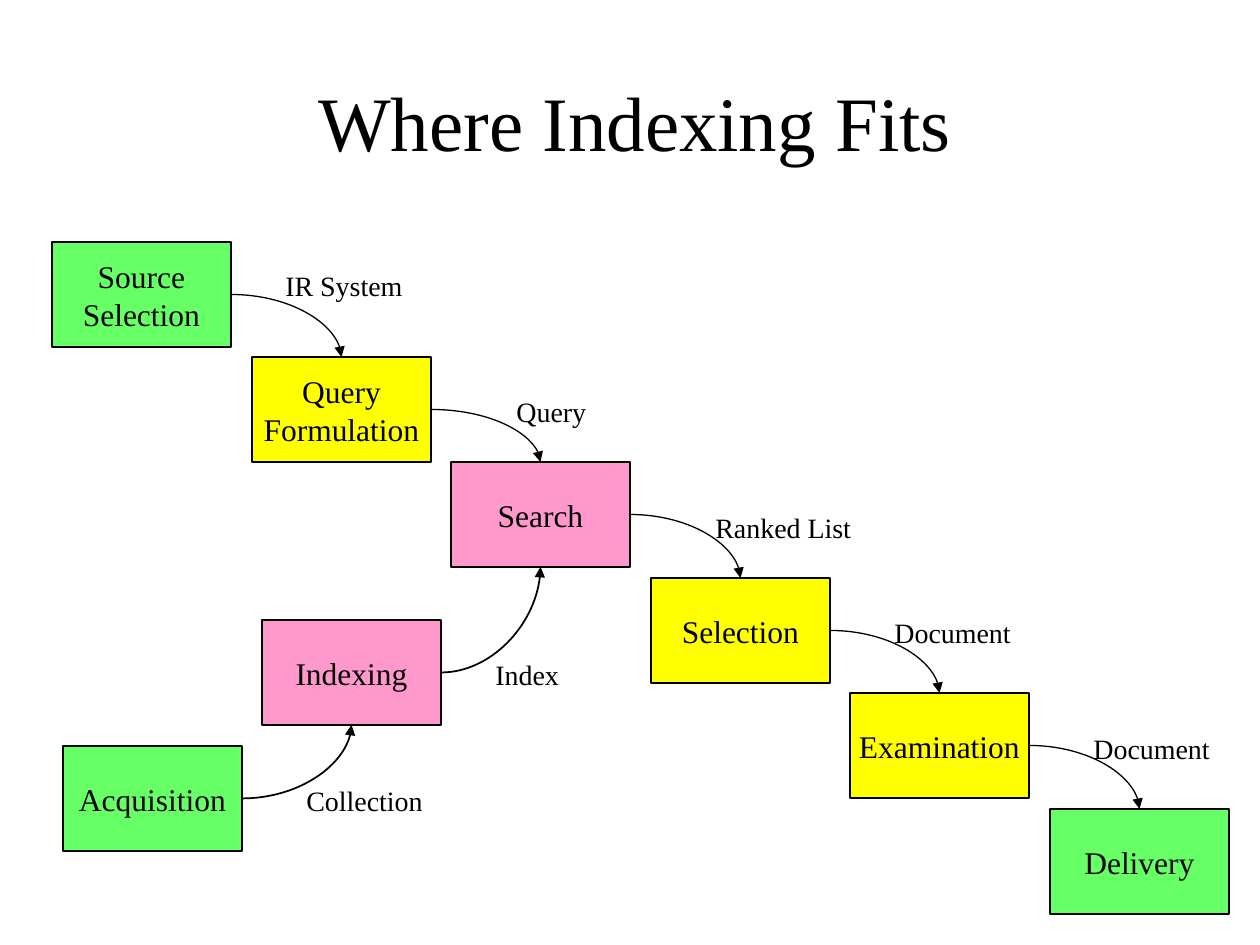
from lxml import etree
from pptx import Presentation
from pptx import util as u
from pptx.dml.color import RGBColor
from pptx.enum import shapes, text
from pptx.oxml.ns import qn

PX = 914400 / 126
FONT = "Times New Roman"
COLOURS = {"ink": "000000", "source": "66FF66", "user": "FFFF00", "system": "FF99CC"}
BOX_WIDTH, BOX_HEIGHT = 179, 105
TOP, RIGHT, BOTTOM = 0, 3, 2

# name: (left, top, colour)
STAGES = {
    "Source\nSelection": (52, 242, "source"),
    "Query\nFormulation": (252, 357, "user"),
    "Search": (451, 462, "system"),
    "Selection": (651, 578, "user"),
    "Examination": (850, 693, "user"),
    "Delivery": (1050, 809, "source"),
    "Indexing": (262, 620, "system"),
    "Acquisition": (63, 746, "source"),
}
# start, end, label, label left, label top, label width
FLOWS = [
    ("Source\nSelection", "Query\nFormulation", "IR System", 273, 262, 144),
    ("Query\nFormulation", "Search", "Query", 504, 388, 96),
    ("Search", "Selection", "Ranked List", 703, 504, 161),
    ("Selection", "Examination", "Document", 882, 609, 142),
    ("Examination", "Delivery", "Document", 1081, 725, 142),
    ("Indexing", "Search", "Index", 483, 651, 89),
    ("Acquisition", "Indexing", "Collection", 294, 777, 142),
]


def px(*lengths):
    return [u.Emu(round(length * PX)) for length in lengths]


def colour(name):
    return RGBColor.from_string(COLOURS[name])


def write(frame, words, size, align):
    frame.text = words
    for para in frame.paragraphs:
        para.alignment = align
        para.font.name = FONT
        para.font.size = u.Pt(size)
        para.font.color.rgb = colour("ink")


def add_title(page, words):
    title = page.shapes.title
    title.left, title.top, title.width, title.height = px(73, 42, 1124, 158)
    title.text_frame.vertical_anchor = text.MSO_ANCHOR.MIDDLE
    write(title.text_frame, words, 44, text.PP_ALIGN.CENTER)


def add_stage(page, name, left, top, fill):
    box = page.shapes.add_shape(
        shapes.MSO_SHAPE.RECTANGLE, *px(left, top, BOX_WIDTH, BOX_HEIGHT))
    box.shadow.inherit = False
    box.fill.solid()
    box.fill.fore_color.rgb = colour(fill)
    box.line.color.rgb = colour("ink")
    box.line.width = u.Pt(0.75)
    box.text_frame.word_wrap = False
    box.text_frame.vertical_anchor = text.MSO_ANCHOR.MIDDLE
    write(box.text_frame, name, 18, text.PP_ALIGN.CENTER)
    return box


def add_flow(page, start, end):
    """Curve from the right side of start to the nearer edge of end."""
    rises = end.top < start.top
    arrow = page.shapes.add_connector(
        shapes.MSO_CONNECTOR.CURVE,
        start.left + start.width, start.top + start.height // 2,
        end.left + end.width // 2, end.top + (end.height if rises else 0))
    arrow.begin_connect(start, RIGHT)
    arrow.end_connect(end, BOTTOM if rises else TOP)
    arrow.line.color.rgb = colour("ink")
    arrow.line.width = u.Pt(1 if rises else 0.75)
    properties = arrow.element.spPr
    properties.find(qn("a:prstGeom")).set("prst", "curvedConnector2")
    line = properties.find(qn("a:ln"))
    etree.SubElement(line, qn("a:tailEnd"), type="triangle")
    etree.SubElement(properties, qn("a:effectLst"))


def add_label(page, words, left, top, width):
    label = page.shapes.add_textbox(*px(left, top, width, 47))
    label.text_frame.word_wrap = False
    label.text_frame.auto_size = text.MSO_AUTO_SIZE.SHAPE_TO_FIT_TEXT
    write(label.text_frame, words, 16, text.PP_ALIGN.LEFT)


def main():
    deck = Presentation()
    deck.slide_width, deck.slide_height = px(1260, 945)
    page = deck.slides.add_slide(deck.slide_layouts.get_by_name("Title Only"))
    add_title(page, "Where Indexing Fits")
    boxes = {name: add_stage(page, name, *place) for name, place in STAGES.items()}
    for start, end, words, left, top, width in FLOWS:
        add_flow(page, boxes[start], boxes[end])
        add_label(page, words, left, top, width)
    deck.save("out.pptx")


if __name__ == "__main__":
    main()
